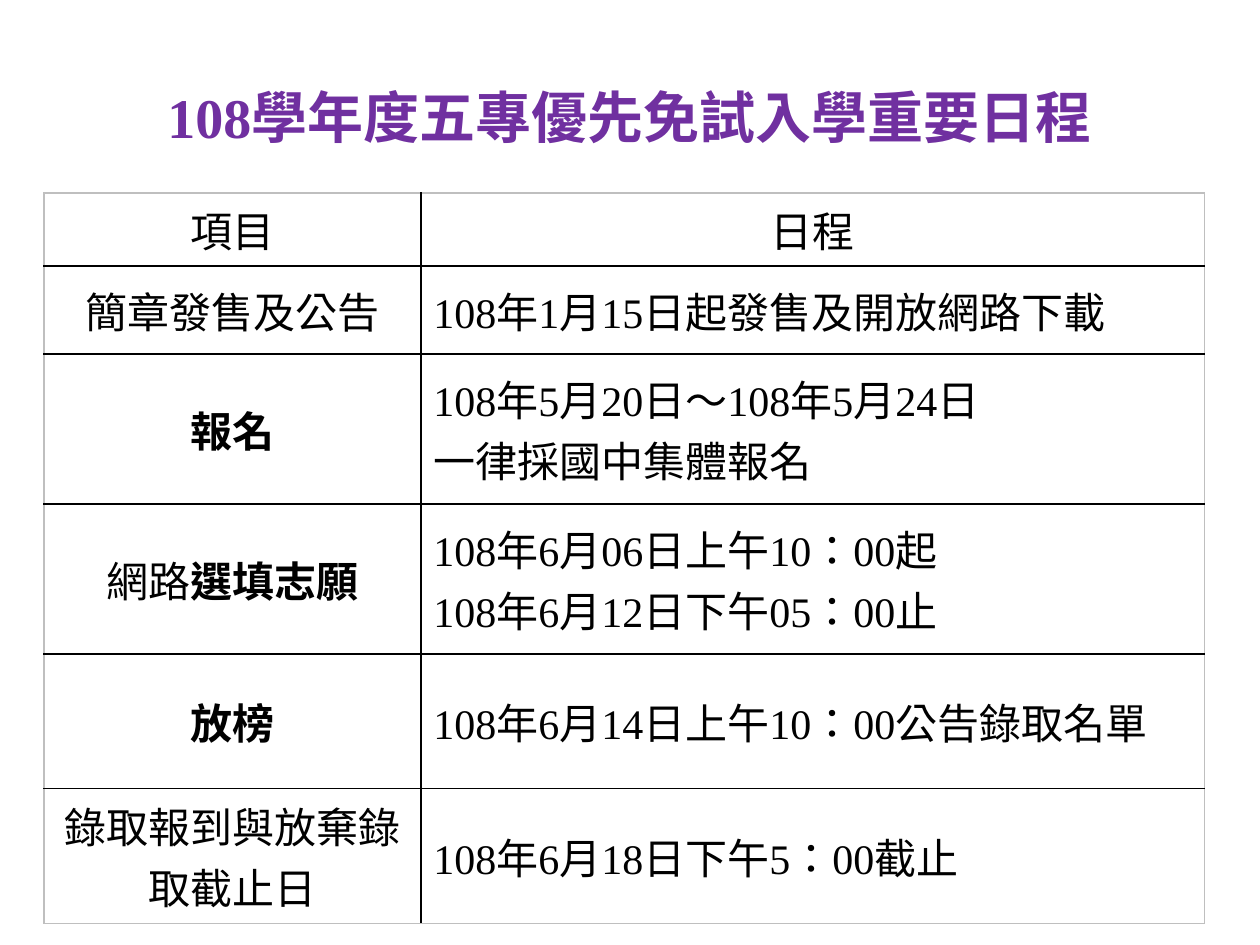
from dataclasses import dataclass

from lxml import etree
from pptx import Presentation
from pptx import util as u
from pptx.dml.color import RGBColor
from pptx.enum import lang, text
from pptx.oxml import ns


@dataclass(frozen=True)
class Theme:
    font: str = "Times New Roman"
    title_size: int = 32
    body_size: int = 24
    title_color: str = "7030A0"
    body_color: str = "000000"
    grid_color: str = "000000"
    frame_color: str = "BFBFBF"
    line_width: int = 1


THEME = Theme()
WIDTH, HEIGHT = u.Inches(10), u.Inches(7.5)
COLUMNS = (2.99, 6.22)
ROWS = (0.58, 0.7, 1.19, 1.19, 1.07, 1.07)

TITLE = "108學年度五專優先免試入學重要日程"
# Each cell is a list of lines; each line is a list of (text, bold) runs.
SCHEDULE = [
    ([[("項目", False)]], [[("日程", False)]]),
    ([[("簡章發售及公告", False)]], [[("108年1月15日起發售及開放網路下載", False)]]),
    ([[("報名", True)]],
     [[("108年5月20日～108年5月24日", False)], [("一律採國中集體報名", False)]]),
    ([[("網路", False), ("選填志願", True)]],
     [[("108年6月06日上午10：00起", False)], [("108年6月12日下午05：00止", False)]]),
    ([[("放榜", True)]], [[("108年6月14日上午10：00公告錄取名單", False)]]),
    ([[("錄取報到與放棄錄取截止日", False)]], [[("108年6月18日下午5：00截止", False)]]),
]


def style_font(font, size, color):
    font.name = THEME.font
    font.size = u.Pt(size)
    font.color.rgb = RGBColor.from_string(color)
    font.language_id = lang.MSO_LANGUAGE_ID.TRADITIONAL_CHINESE


def add_title(slide, left, top, width, height):
    frame = slide.shapes.add_textbox(left, top, width, height).text_frame
    frame.word_wrap = True
    frame.vertical_anchor = text.MSO_ANCHOR.MIDDLE
    paragraph = frame.paragraphs[0]
    paragraph.text = TITLE
    paragraph.alignment = text.PP_ALIGN.CENTER
    style_font(paragraph.font, THEME.title_size, THEME.title_color)
    paragraph.font.bold = True


def set_borders(cell, outer_sides):
    """Rule all four sides, with the frame colour on the outer ones."""
    properties = cell._tc.get_or_add_tcPr()
    for side in "LRTB":
        color = THEME.frame_color if side in outer_sides else THEME.grid_color
        line = etree.SubElement(properties, ns.qn(f"a:ln{side}"),
                                w=str(u.Pt(THEME.line_width)))
        fill = etree.SubElement(line, ns.qn("a:solidFill"))
        etree.SubElement(fill, ns.qn("a:srgbClr"), val=color)


def fill_cell(cell, lines, alignment):
    cell.vertical_anchor = text.MSO_ANCHOR.MIDDLE
    frame = cell.text_frame
    for index, runs in enumerate(lines):
        paragraph = frame.add_paragraph() if index else frame.paragraphs[0]
        paragraph.alignment = alignment
        for words, bold in runs:
            run = paragraph.add_run()
            run.text = words
            style_font(run.font, THEME.body_size, THEME.body_color)
            run.font.bold = bold


def add_schedule(slide, left, top, width, height):
    table = slide.shapes.add_table(len(ROWS), len(COLUMNS),
                                   left, top, width, height).table
    table.first_row = table.horz_banding = False
    for column, share in zip(table.columns, COLUMNS):
        column.width = int(width * share / sum(COLUMNS))
    for row, share in zip(table.rows, ROWS):
        row.height = int(height * share / sum(ROWS))
    last_row = len(ROWS) - 1
    for i, entries in enumerate(SCHEDULE):
        for j, lines in enumerate(entries):
            cell = table.cell(i, j)
            outer_sides = "LR"[j] + {0: "T", last_row: "B"}.get(i, "")
            set_borders(cell, outer_sides)
            cell.fill.background()
            centred = i == 0 or j == 0
            fill_cell(cell, lines, text.PP_ALIGN.CENTER if centred
                      else text.PP_ALIGN.LEFT)


def main():
    presentation = Presentation()
    presentation.slide_width, presentation.slide_height = WIDTH, HEIGHT
    slide = presentation.slides.add_slide(presentation.slide_layouts[6])
    add_title(slide, 0, u.Inches(0.3), WIDTH, u.Inches(1.25))
    add_schedule(slide, u.Inches(0.35), u.Inches(1.53),
                 u.Inches(sum(COLUMNS)), u.Inches(sum(ROWS)))
    presentation.save("out.pptx")


if __name__ == "__main__":
    main()
